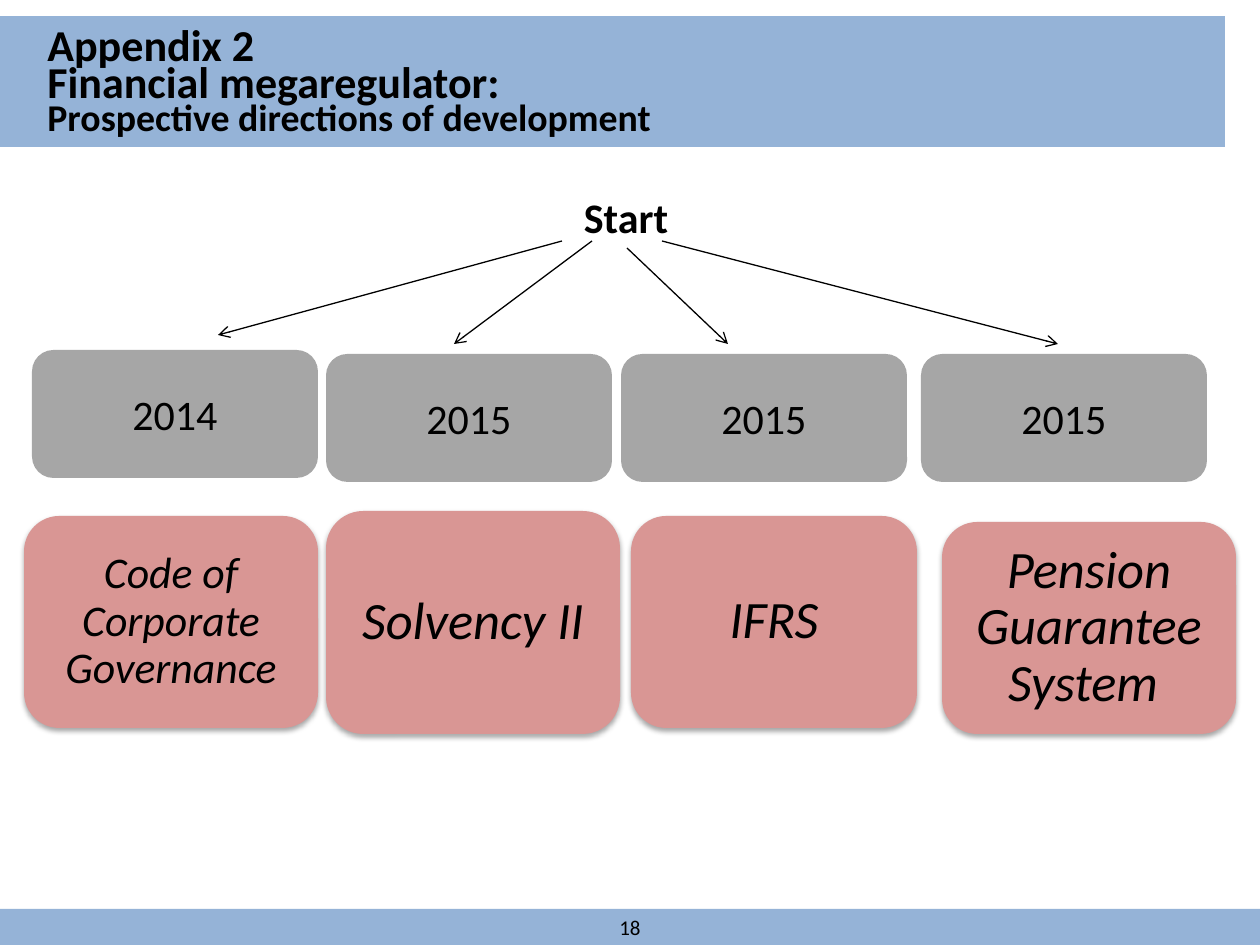
import pptx
import pptx.util
import pptx.dml.color
import pptx.enum.shapes
import pptx.enum.text
import pptx.oxml
import pptx.oxml.ns

EMU_PER_PX = 914400 / 126
FONT = "Calibri"
BLUE, GREY, ROSE, BLACK = "95B3D7", "A6A6A6", "D99694", "000000"
SHAPE = pptx.enum.shapes.MSO_SHAPE
ALIGN = pptx.enum.text.PP_ALIGN
ANCHOR = pptx.enum.text.MSO_ANCHOR
NS = pptx.oxml.ns.nsdecls("a")
SHADOW = (
    f'<a:effectLst {NS}><a:outerShdw blurRad="40000" dist="23000" dir="5400000" rotWithShape="0">'
    f'<a:srgbClr val="{BLACK}"><a:alpha val="35000"/></a:srgbClr></a:outerShdw></a:effectLst>'
)


def px(n):
    return pptx.util.Emu(round(n * EMU_PER_PX))


def rgb(color):
    return pptx.dml.color.RGBColor.from_string(color)


def set_font(p, size, bold=False, italic=False):
    font = p.font
    font.name, font.size = FONT, pptx.util.Pt(size)
    font.bold, font.italic = bold, italic
    font.color.rgb = rgb(BLACK)


def add_block(s, kind, box, color, text="", size=12, italic=False):
    sp = s.shapes.add_shape(kind, *map(px, box))
    sp.shadow.inherit = False
    sp.fill.solid()
    sp.fill.fore_color.rgb = rgb(color)
    sp.line.fill.background()
    if text:
        tf = sp.text_frame
        tf.word_wrap = True
        tf.vertical_anchor = ANCHOR.MIDDLE
        p = tf.paragraphs[0]
        p.text = text
        p.alignment = ALIGN.CENTER
        set_font(p, size, italic=italic)
    return sp


def add_card(s, box, text, size, inset):
    sp = add_block(s, SHAPE.ROUNDED_RECTANGLE, box, ROSE, text, size, italic=True)
    tf = sp.text_frame
    tf.margin_left = tf.margin_right = tf.margin_top = tf.margin_bottom = px(inset)
    tf.paragraphs[0].line_spacing = 0.9
    spPr = sp._element.spPr
    spPr.remove(spPr.find(pptx.oxml.ns.qn("a:effectLst")))
    spPr.append(pptx.oxml.parse_xml(SHADOW))


def add_label(s, box, lines, align, anchor, spacing=1.0):
    tf = s.shapes.add_textbox(*map(px, box)).text_frame
    tf.word_wrap = True
    tf.vertical_anchor = anchor
    for i, (text, size) in enumerate(lines):
        p = tf.add_paragraph() if i else tf.paragraphs[0]
        p.text = text
        p.alignment = align
        p.line_spacing = spacing
        set_font(p, size, bold=True)


def add_arrow(s, start, end):
    line = s.shapes.add_connector(
        pptx.enum.shapes.MSO_CONNECTOR.STRAIGHT, *map(px, start + end))
    line.line.color.rgb = rgb(BLACK)
    line.line.width = pptx.util.Pt(0.75)
    line.line._get_or_add_ln().append(pptx.oxml.parse_xml(f'<a:tailEnd {NS} type="arrow"/>'))
    line._element.spPr.append(pptx.oxml.parse_xml(f"<a:effectLst {NS}/>"))


def main():
    prs = pptx.Presentation()
    prs.slide_width, prs.slide_height = px(1260), px(945)
    s = prs.slides.add_slide(prs.slide_layouts[6])

    add_block(s, SHAPE.RECTANGLE, (0, 16, 1225, 131), BLUE)
    add_block(s, SHAPE.RECTANGLE, (0, 909, 1260, 36), BLUE, "18", 12)
    title = [("Appendix 2", 25.2), ("Financial megaregulator:", 25.2),
             ("Prospective directions of development", 21.6)]
    add_label(s, (35, 21, 1062, 123), title, ALIGN.LEFT, ANCHOR.BOTTOM, 0.7)
    add_label(s, (471, 185, 310, 63), [("Start", 24)], ALIGN.CENTER, ANCHOR.TOP)

    for start, end in [((562, 241), (218, 335)), ((592, 241), (454, 344)),
                       ((627, 248), (728, 344)), ((662, 241), (1058, 344))]:
        add_arrow(s, start, end)

    for x, y, year in [(32, 350, "2014"), (326, 354, "2015"),
                       (621, 354, "2015"), (921, 354, "2015")]:
        add_block(s, SHAPE.ROUNDED_RECTANGLE, (x, y, 286, 128), GREY, year, 24)

    for box, text, size, inset in [
        ((24, 516, 294, 212), "Code of Corporate Governance", 25, 16),
        ((326, 511, 294, 223), "Solvency II", 30, 15),
        ((631, 516, 286, 212), "IFRS", 30, 15),
        ((942, 522, 294, 212), "Pension Guarantee System ", 30, 6),
    ]:
        add_card(s, box, text, size, inset)

    prs.save("out.pptx")


if __name__ == "__main__":
    main()
